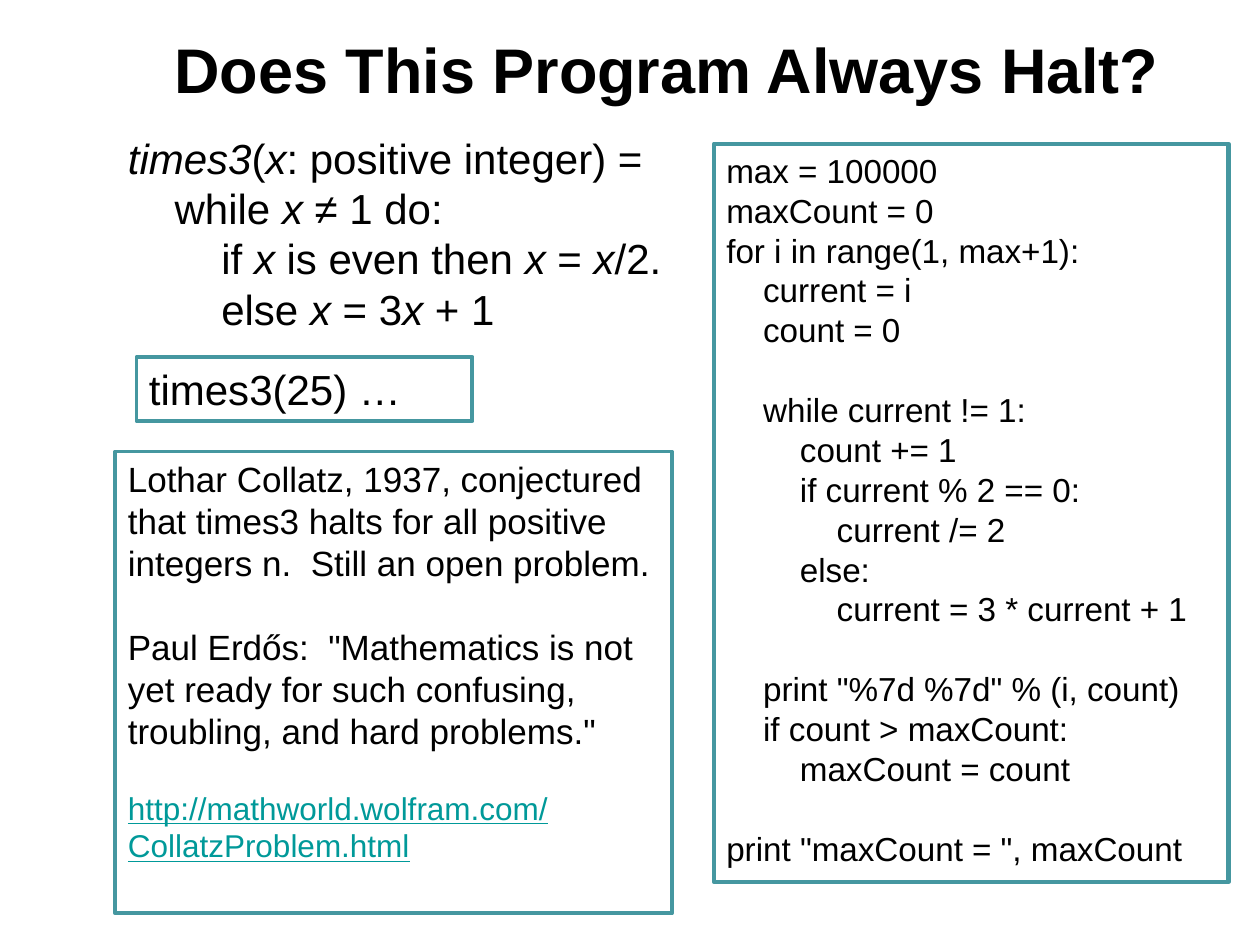
import pptx
import pptx.util
import pptx.dml.color
import pptx.enum.shapes
import pptx.enum.text

Pt = pptx.util.Pt
RGB = pptx.dml.color.RGBColor
BLACK = RGB(0x00, 0x00, 0x00)
TEAL = RGB(0x45, 0x97, 0xA0)
LINK = RGB(0x00, 0x99, 0x99)
FONT = "Arial"

WIDE = pptx.util.Inches(10)
HIGH = pptx.util.Inches(7.5)
COL = WIDE // 120
ROW = HIGH // 90

TITLE = (7, 1, 113, 11)
RULES = (11, 12, 106, 20.6)
CALL = (13, 34, 32, 6.1)
CODE = (68, 13.7, 49, 70.3)
NOTES = (11, 43, 53, 44)

STEPS = [
    (0, "*times3*(*x*: positive integer) ="),
    (1, "while *x* ≠ 1 do:"),
    (2, "if *x* is even then *x* = *x*/2."),
    (2, "else *x* = 3*x* + 1"),
]

SOURCE = """max = 100000
maxCount = 0
for i in range(1, max+1):
    current = i
    count = 0

    while current != 1:
        count += 1
        if current % 2 == 0:
            current /= 2
        else:
            current = 3 * current + 1

    print "%7d %7d" % (i, count)
    if count > maxCount:
        maxCount = count

print "maxCount = ", maxCount"""


def place(box):
    left, top, width, height = box
    return [round(n) for n in (left * COL, top * ROW, width * COL, height * ROW)]


def label(slide, box):
    frame = slide.shapes.add_textbox(*place(box)).text_frame
    frame.word_wrap = True
    return frame


def panel(slide, box, weight=2.25):
    shape = slide.shapes.add_shape(
        pptx.enum.shapes.MSO_SHAPE.RECTANGLE, *place(box))
    shape.shadow.inherit = False
    shape.fill.background()
    shape.line.color.rgb = TEAL
    shape.line.width = Pt(weight)
    frame = shape.text_frame
    frame.word_wrap = True
    frame.vertical_anchor = pptx.enum.text.MSO_ANCHOR.TOP
    return frame


def write(frame, text, size, first=False, gap=0):
    para = frame.paragraphs[0] if first else frame.add_paragraph()
    para.alignment = pptx.enum.text.PP_ALIGN.LEFT
    if gap:
        para.space_before = Pt(gap)
    for turn, part in enumerate(text.split("*") if frame_marks(text) else [text]):
        if part:
            run = para.add_run()
            run.text = part
            if turn % 2:
                run.font.italic = True
    para.font.name = FONT
    para.font.size = Pt(size)
    para.font.color.rgb = BLACK
    return para


def frame_marks(text):
    return text.count("*") > 1


def title(slide, box):
    frame = label(slide, box)
    frame.vertical_anchor = pptx.enum.text.MSO_ANCHOR.MIDDLE
    para = write(frame, "Does This Program Always Halt?", 36, True)
    para.alignment = pptx.enum.text.PP_ALIGN.CENTER
    para.font.bold = True


def rules(slide, box):
    frame = label(slide, box)
    for row, (depth, text) in enumerate(STEPS):
        para = write(frame, text, 24, row == 0)
        para._p.get_or_add_pPr().set("marL", str(round(depth * 4.45 * COL)))


def call(slide, box):
    write(panel(slide, box), "times3(25) …", 24, True)


def code(slide, box):
    frame = panel(slide, box, 2.5)
    gap = 0
    for row, text in enumerate(SOURCE.split("\n")):
        if text:
            write(frame, text, 19, row == 0, gap)
        gap = 0 if text else 22.8


def notes(slide, box):
    frame = panel(slide, box)
    write(frame, "Lothar Collatz, 1937, conjectured that times3 halts for all "
          "positive integers n.  Still an open problem.", 20, True)
    write(frame, 'Paul Erdős:  "Mathematics is not yet ready for such '
          'confusing, troubling, and hard problems."', 20, gap=24)
    link = write(frame, "http://mathworld.wolfram.com/CollatzProblem.html", 18, gap=21)
    link.font.color.rgb = LINK
    link.font.underline = True


def main():
    deck = pptx.Presentation()
    deck.slide_width = WIDE
    deck.slide_height = HIGH
    slide = deck.slides.add_slide(deck.slide_layouts[6])
    title(slide, TITLE)
    rules(slide, RULES)
    call(slide, CALL)
    code(slide, CODE)
    notes(slide, NOTES)
    deck.save("out.pptx")


if __name__ == "__main__":
    main()
